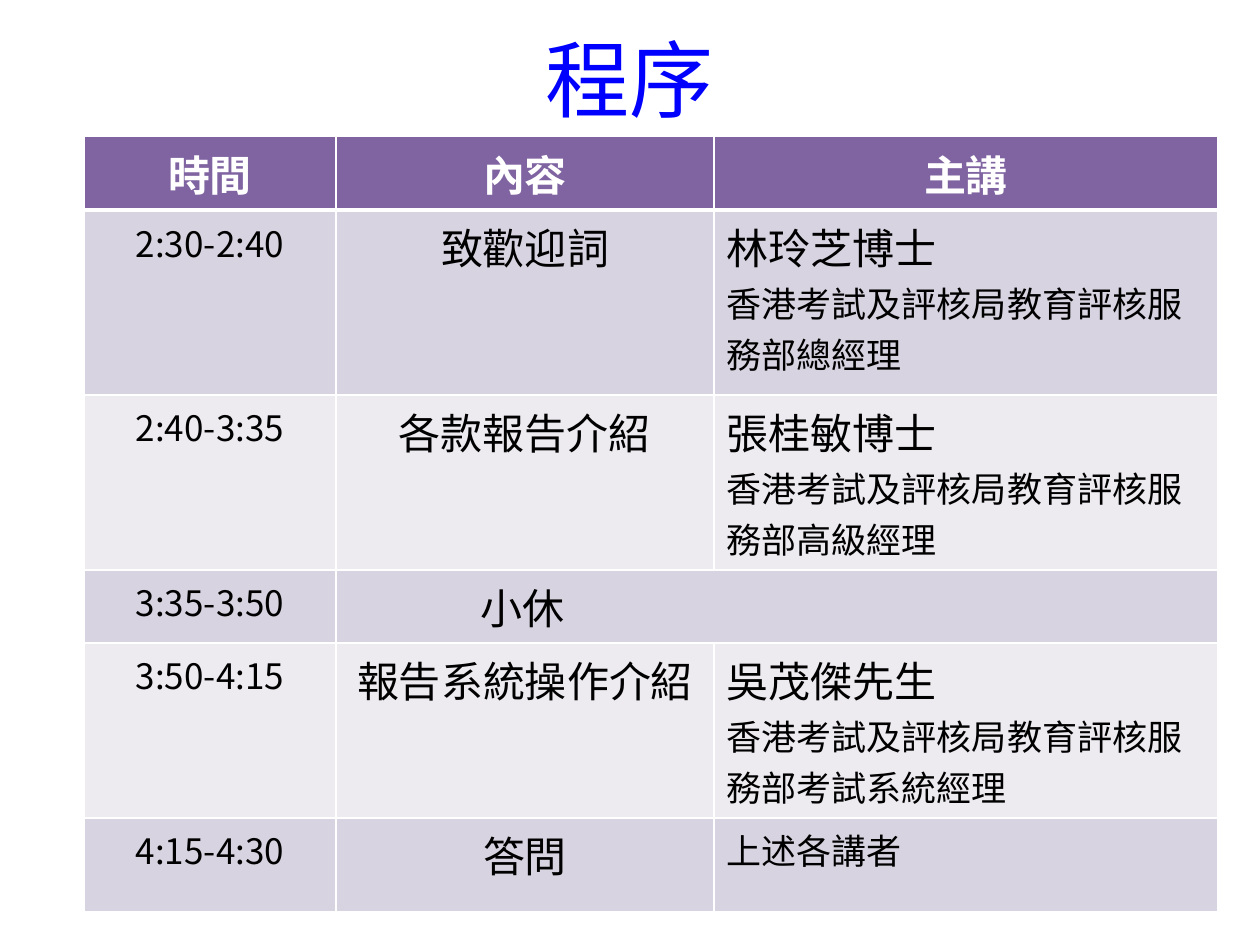
from lxml.etree import SubElement
from pptx import Presentation
from pptx.dml.color import RGBColor
from pptx.enum.text import MSO_ANCHOR, PP_ALIGN
from pptx.oxml.ns import qn
from pptx.util import Pt

PX = 914400 / 126
FONT = "Noto Sans CJK SC"
BLUE = RGBColor(0x00, 0x00, 0xFF)
BLACK = RGBColor(0x00, 0x00, 0x00)
WHITE = RGBColor(0xFF, 0xFF, 0xFF)
PURPLE = RGBColor(0x80, 0x64, 0xA2)
BANDS = [RGBColor(0xD8, 0xD3, 0xE0), RGBColor(0xED, 0xEA, 0xF0)]

COLUMNS = [252, 378, 504]
ROWS = [74, 185, 175, 73, 175, 94]
OFFICE = "香港考試及評核局教育評核服務部"
PROGRAMME = [
    ("時間", "內容", ["主講"]),
    ("2:30-2:40", "致歡迎詞", ["林玲芝博士", OFFICE + "總經理"]),
    ("2:40-3:35", "各款報告介紹", ["張桂敏博士", OFFICE + "高級經理"]),
    ("3:35-3:50", "小休", []),
    ("3:50-4:15", "報告系統操作介紹", ["吳茂傑先生", OFFICE + "考試系統經理"]),
    ("4:15-4:30", "答問", ["上述各講者"]),
]
BREAK_ROW, LAST_ROW = 3, 5


def px(*lengths):
    return [round(length * PX) for length in lengths]


def write(para, text, size=24, color=BLACK, bold=False, align=PP_ALIGN.CENTER):
    para.alignment = align
    span = para.add_run()
    span.text = text
    span.font.size = Pt(size)
    span.font.bold = bold
    span.font.color.rgb = color
    span.font.name = FONT
    SubElement(span.font._element, qn("a:ea"), typeface=FONT)


deck = Presentation()
deck.slide_width, deck.slide_height = px(1260, 945)
page = deck.slides.add_slide(deck.slide_layouts[6])

title = page.shapes.add_textbox(*px(63, 10, 1134, 136)).text_frame
title.word_wrap = True
title.vertical_anchor = MSO_ANCHOR.MIDDLE
write(title.paragraphs[0], "程序", size=48, color=BLUE)

table = page.shapes.add_table(
    len(ROWS), len(COLUMNS), *px(84, 136, sum(COLUMNS), sum(ROWS))).table
for column, width in zip(table.columns, px(*COLUMNS)):
    column.width = width
for row, height in zip(table.rows, px(*ROWS)):
    row.height = height

# White borders, thicker under the header, then the header and band fills
for r, row in enumerate(table.rows):
    for cell in row.cells:
        properties = cell._tc.get_or_add_tcPr()
        for side in "LRTB":
            thick = (r, side) in [(0, "B"), (1, "T")]
            line = SubElement(properties, qn("a:ln" + side), w=str(Pt(3 if thick else 1)))
            fill = SubElement(line, qn("a:solidFill"))
            SubElement(fill, qn("a:srgbClr"), val=str(WHITE))
        cell.fill.solid()
        cell.fill.fore_color.rgb = BANDS[(r - 1) % 2] if r else PURPLE

break_cell = table.cell(BREAK_ROW, 1)
break_cell.merge(table.cell(BREAK_ROW, 2))
break_cell.margin_left = px(145)[0]

for r, (time, topic, speaker) in enumerate(PROGRAMME):
    header = r == 0
    look = {"color": WHITE if header else BLACK, "bold": header}
    write(table.cell(r, 0).text_frame.paragraphs[0], time, size=24 if header else 20, **look)
    topic_align = PP_ALIGN.LEFT if r == BREAK_ROW else PP_ALIGN.CENTER
    write(table.cell(r, 1).text_frame.paragraphs[0], topic, align=topic_align, **look)
    frame = table.cell(r, 2).text_frame
    for i, text in enumerate(speaker):
        para = frame.add_paragraph() if i else frame.paragraphs[0]
        write(para, text, size=20 if i or r == LAST_ROW else 24,
              align=PP_ALIGN.CENTER if header else PP_ALIGN.LEFT, **look)

deck.save("out.pptx")
